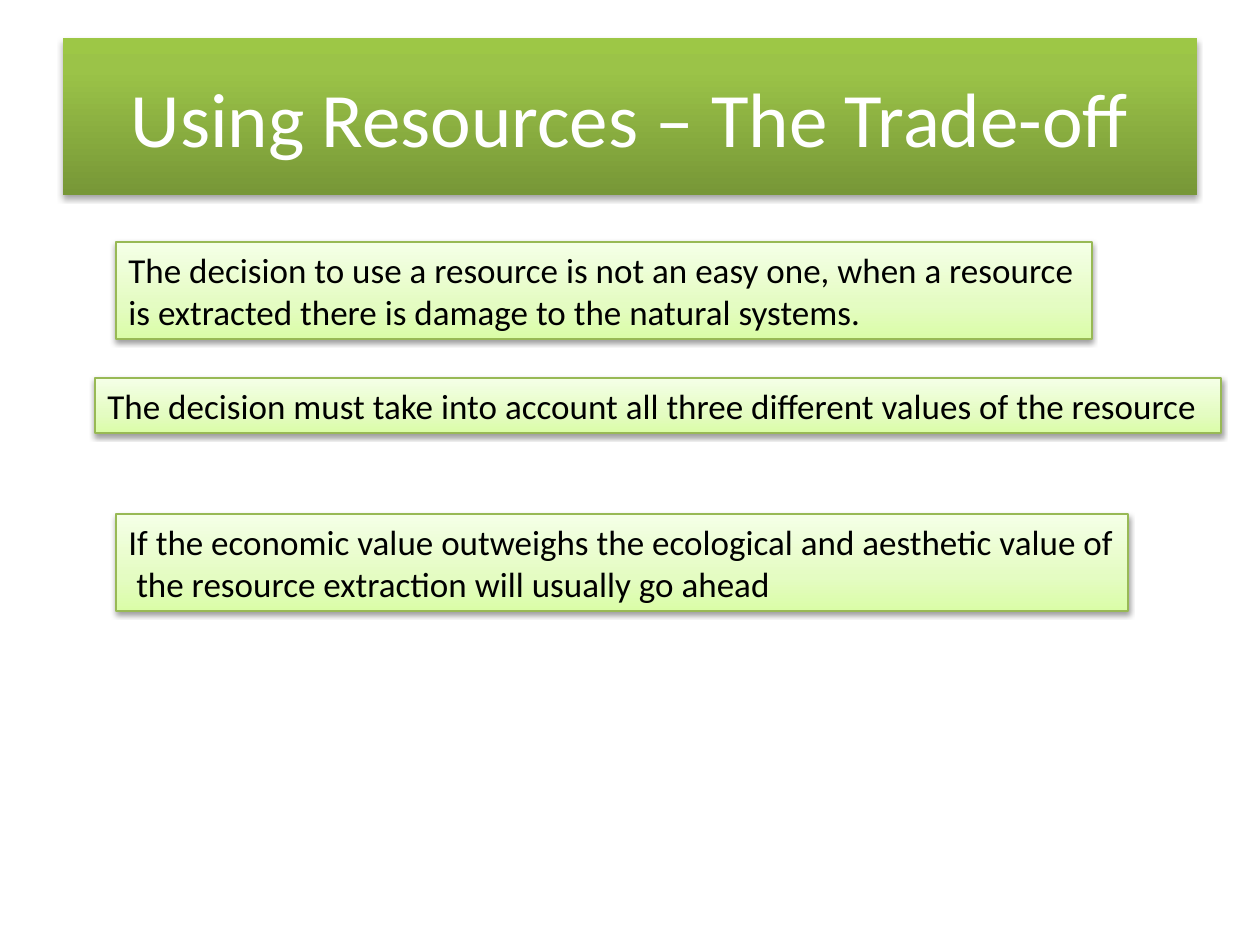
from pptx import Presentation
from pptx.dml.color import RGBColor
from pptx.enum.text import MSO_ANCHOR, MSO_AUTO_SIZE, PP_ALIGN
from pptx.oxml.ns import qn
from pptx.util import Pt
from lxml import etree

EMU_PER_PX = 914400 / 126
EMU_PER_PT = 12700
TITLE_ONLY = 5
LEFT, CENTER = PP_ALIGN.LEFT, PP_ALIGN.CENTER
MIDDLE, TOP = MSO_ANCHOR.MIDDLE, MSO_ANCHOR.TOP
NO_FIT, GROW = MSO_AUTO_SIZE.NONE, MSO_AUTO_SIZE.SHAPE_TO_FIT_TEXT

FONT = "Calibri"
WHITE, BLACK, BORDER = "FFFFFF", "000000", "98B955"
TITLE_STOPS = [(0, "779737"), (80, "9BC348"), (100, "9DC746")]
BOX_STOPS = [(0, "DAFDA7"), (35, "E4FCC2"), (100, "F5FFE7")]

# Box in px, whether its text wraps, and its paragraphs
STATEMENTS = [
    ((116, 242, 976, 97), True,
     ["The decision to use a resource is not an easy one, when a resource "
      "is extracted there is damage to the natural systems."]),
    ((95, 378, 1126, 55), False,
     ["The decision must take into account all three different values of the resource"]),
    ((116, 514, 1012, 97), False,
     ["If the economic value outweighs the ecological and aesthetic value of",
      " the resource extraction will usually go ahead"]),
]


def px(length):
    return round(length * EMU_PER_PX)


def color(value):
    return RGBColor.from_string(value)


def place(shape, box):
    shape.left, shape.top, shape.width, shape.height = map(px, box)


def add_color(parent, tag, value, **attributes):
    element = etree.SubElement(parent, qn(tag), **attributes)
    return etree.SubElement(element, qn("a:srgbClr"), val=value)


def fill_gradient(shape, stops):
    """Fill upwards from the first stop at the bottom edge."""
    shape.fill.gradient()
    shape.fill.gradient_angle = 90
    stop_list = shape.element.spPr.find(".//" + qn("a:gsLst"))
    for stop in list(stop_list):
        stop_list.remove(stop)
    for position, value in stops:
        add_color(stop_list, "a:gs", value, pos=str(position * 1000))


def add_shadow(shape, opacity, distance, blur=3.1):
    shape.shadow.inherit = False
    effects = shape.element.spPr.find(qn("a:effectLst"))
    shadow = add_color(effects, "a:outerShdw", BLACK,
                       blurRad=str(round(blur * EMU_PER_PT)),
                       dist=str(round(distance * EMU_PER_PT)),
                       dir="5400000", rotWithShape="0")
    etree.SubElement(shadow, qn("a:alpha"), val=str(opacity * 1000))


def write_text(shape, lines, size, text_color, align=LEFT, anchor=TOP,
               wrap=True, fit=NO_FIT):
    frame = shape.text_frame
    frame.text = "\n".join(lines)
    frame.word_wrap = wrap
    frame.auto_size = fit
    frame.vertical_anchor = anchor
    for paragraph in frame.paragraphs:
        paragraph.alignment = align
        for run in paragraph.runs:
            run.font.name = FONT
            run.font.size = Pt(size)
            run.font.color.rgb = color(text_color)


def build_title(slide, box):
    title = slide.shapes.title
    place(title, box)
    fill_gradient(title, TITLE_STOPS)
    title.line.fill.background()
    add_shadow(title, opacity=35, distance=1.8)
    write_text(title, ["Using Resources – The Trade-off"], 44, WHITE,
               align=CENTER, anchor=MIDDLE)


def build_statement(slide, box, wrap, lines):
    statement = slide.shapes.add_textbox(*map(px, box))
    fill_gradient(statement, BOX_STOPS)
    statement.line.color.rgb = color(BORDER)
    statement.line.width = Pt(0.75)
    add_shadow(statement, opacity=38, distance=1.6)
    write_text(statement, lines, 20, BLACK, wrap=wrap, fit=GROW)


def main():
    presentation = Presentation()
    presentation.slide_width, presentation.slide_height = px(1260), px(945)
    slide = presentation.slides.add_slide(presentation.slide_layouts[TITLE_ONLY])

    # Title band
    build_title(slide, (63, 38, 1134, 157))

    # Statement boxes
    for box, wrap, lines in STATEMENTS:
        build_statement(slide, box, wrap, lines)

    presentation.save("out.pptx")


if __name__ == "__main__":
    main()
